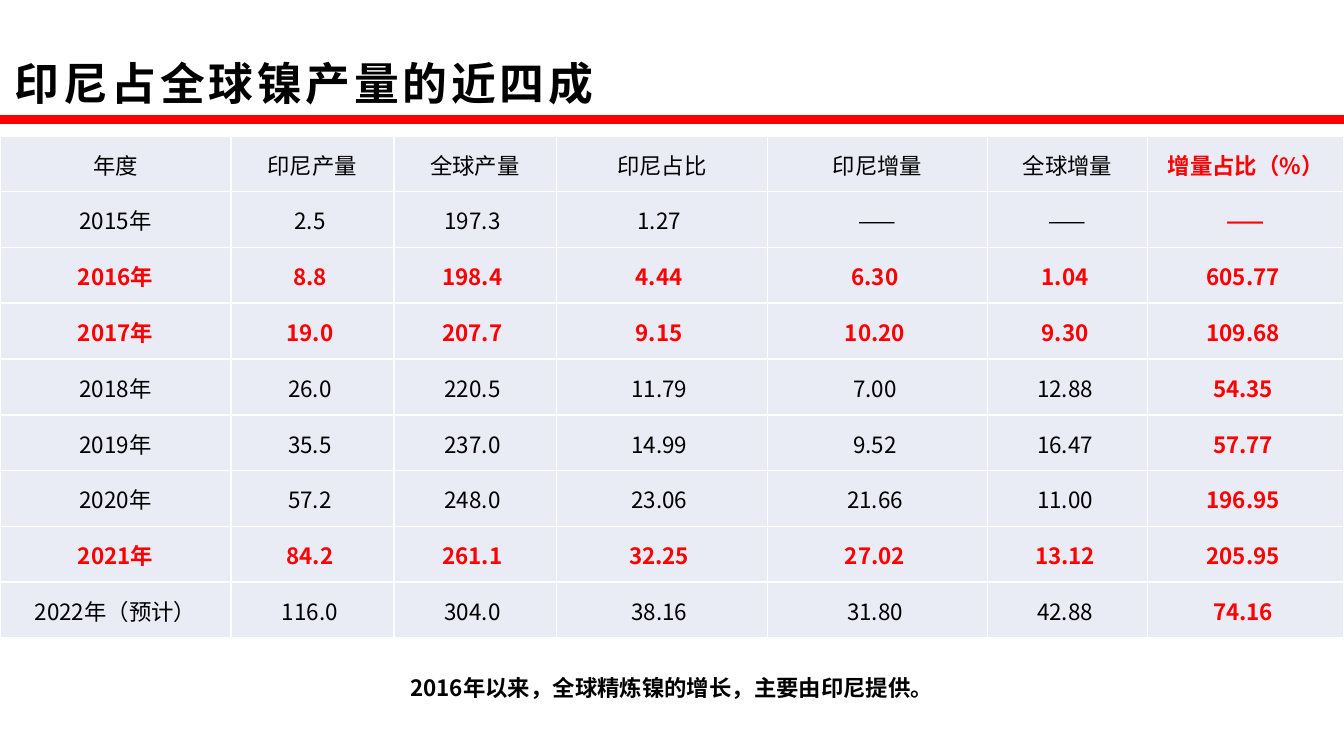
from lxml.etree import SubElement
from pptx import Presentation
from pptx.dml.color import RGBColor
from pptx.enum.shapes import MSO_CONNECTOR as Connector
from pptx.enum.text import MSO_ANCHOR as Anchor, MSO_AUTO_SIZE as AutoSize, PP_ALIGN as Align
from pptx.oxml.ns import qn
from pptx.util import Inches, Pt

FONT = "Noto Sans CJK SC"
BLACK, RED, WHITE, PALE = "000000", "FF0000", "FFFFFF", "E9EBF5"

HEADERS = ["年度", "印尼产量", "全球产量", "印尼占比", "印尼增量", "全球增量", "增量占比（%）"]
ROWS = [
    ["2015年", "2.5 ", "197.3 ", "1.27 ", "——", "——", "——"],
    ["2016年", "8.8 ", "198.4 ", "4.44 ", "6.30 ", "1.04 ", "605.77 "],
    ["2017年", "19.0 ", "207.7 ", "9.15 ", "10.20 ", "9.30 ", "109.68 "],
    ["2018年", "26.0 ", "220.5 ", "11.79 ", "7.00 ", "12.88 ", "54.35 "],
    ["2019年", "35.5 ", "237.0 ", "14.99 ", "9.52 ", "16.47 ", "57.77 "],
    ["2020年", "57.2 ", "248.0 ", "23.06 ", "21.66 ", "11.00 ", "196.95 "],
    ["2021年", "84.2 ", "261.1 ", "32.25 ", "27.02 ", "13.12 ", "205.95 "],
    ["2022年（预计）", "116.0 ", "304.0 ", "38.16 ", "31.80 ", "42.88 ", "74.16 "],
]
COLUMN_WIDTHS = [1.72, 1.21, 1.21, 1.57, 1.64, 1.19, 1.46]
KEY_YEARS = {"2016年", "2017年", "2021年"}


def color(value):
    return RGBColor.from_string(value)


def write(frame, text, size=12, ink=BLACK, bold=False, align=Align.CENTER, spacing=0):
    para = frame.paragraphs[0]
    para.alignment = align
    span = para.add_run()
    span.text = text
    span.font.size = Pt(size)
    span.font.bold = bold
    span.font.color.rgb = color(ink)
    span.font.name = FONT
    properties = span._r.get_or_add_rPr()
    SubElement(properties, qn("a:ea"), typeface=FONT)
    if spacing:
        properties.set("spc", str(spacing * 100))


class SlideBuilder:
    def __init__(self, page, border=WHITE, fill=PALE):
        self.page = page
        self.border = border
        self.fill = fill

    def line(self, left, top, right, bottom, ink, width):
        line = self.page.shapes.add_connector(
            Connector.STRAIGHT, Inches(left), Inches(top), Inches(right), Inches(bottom))
        line.line.color.rgb = color(ink)
        line.line.width = Pt(width)
        SubElement(line._element.spPr, qn("a:effectLst"))

    def text(self, left, top, width, height, text, anchor=Anchor.TOP,
             margins=(0.1, 0.05, 0.1, 0.05), fit=AutoSize.NONE, **style):
        box = self.page.shapes.add_textbox(
            Inches(left), Inches(top), Inches(width), Inches(height))
        frame = box.text_frame
        frame.word_wrap = True
        frame.auto_size = fit
        frame.vertical_anchor = anchor
        (frame.margin_left, frame.margin_top,
         frame.margin_right, frame.margin_bottom) = map(Inches, margins)
        write(frame, text, **style)

    def cell(self, cell, text, **style):
        cell.margin_left = cell.margin_top = cell.margin_right = Inches(0.01)
        cell.margin_bottom = 0
        cell.vertical_anchor = Anchor.MIDDLE
        write(cell.text_frame, text, **style)
        # Borders come before the fill in the cell properties
        properties = cell._tc.get_or_add_tcPr()
        for side in ("lnL", "lnR", "lnT", "lnB"):
            edge = SubElement(properties, qn(f"a:{side}"), w=str(Pt(1)))
            solid = SubElement(edge, qn("a:solidFill"))
            SubElement(solid, qn("a:srgbClr"), val=self.border)
        cell.fill.solid()
        cell.fill.fore_color.rgb = color(self.fill)

    def table(self, left, top, height, widths, rows, is_key):
        table = self.page.shapes.add_table(
            len(rows), len(widths), Inches(left), Inches(top),
            Inches(sum(widths)), Inches(height)).table
        for column, width in zip(table.columns, widths):
            column.width = Inches(width)
        for r, row in enumerate(rows):
            for c, text in enumerate(row):
                key = is_key(row, c)
                self.cell(table.cell(r, c), text, ink=RED if key else BLACK, bold=key)


def main():
    # Widescreen page, 16 to 9
    deck = Presentation()
    deck.slide_width = Inches(10)
    deck.slide_height = deck.slide_width * 9 // 16
    slide = SlideBuilder(deck.slides.add_slide(deck.slide_layouts[6]))

    # Title and rule
    slide.line(0, 0.89, 10, 0.89, RED, 5)
    slide.text(0, 0.35, 10, 0.53, "印尼占全球镍产量的近四成", anchor=Anchor.MIDDLE,
               margins=(0.11, 0.04, 0.08, 0.04), size=24, bold=True,
               align=Align.LEFT, spacing=2)

    # Output table: key years and the last column stand out
    slide.table(0, 1.01, 3.74, COLUMN_WIDTHS, [HEADERS] + ROWS,
                lambda row, c: row[0] in KEY_YEARS or c == len(row) - 1)

    # Conclusion
    slide.text(0, 4.97, 10, 0.3, "2016年以来，全球精炼镍的增长，主要由印尼提供。",
               fit=AutoSize.SHAPE_TO_FIT_TEXT, bold=True)

    deck.save("out.pptx")


if __name__ == "__main__":
    main()
